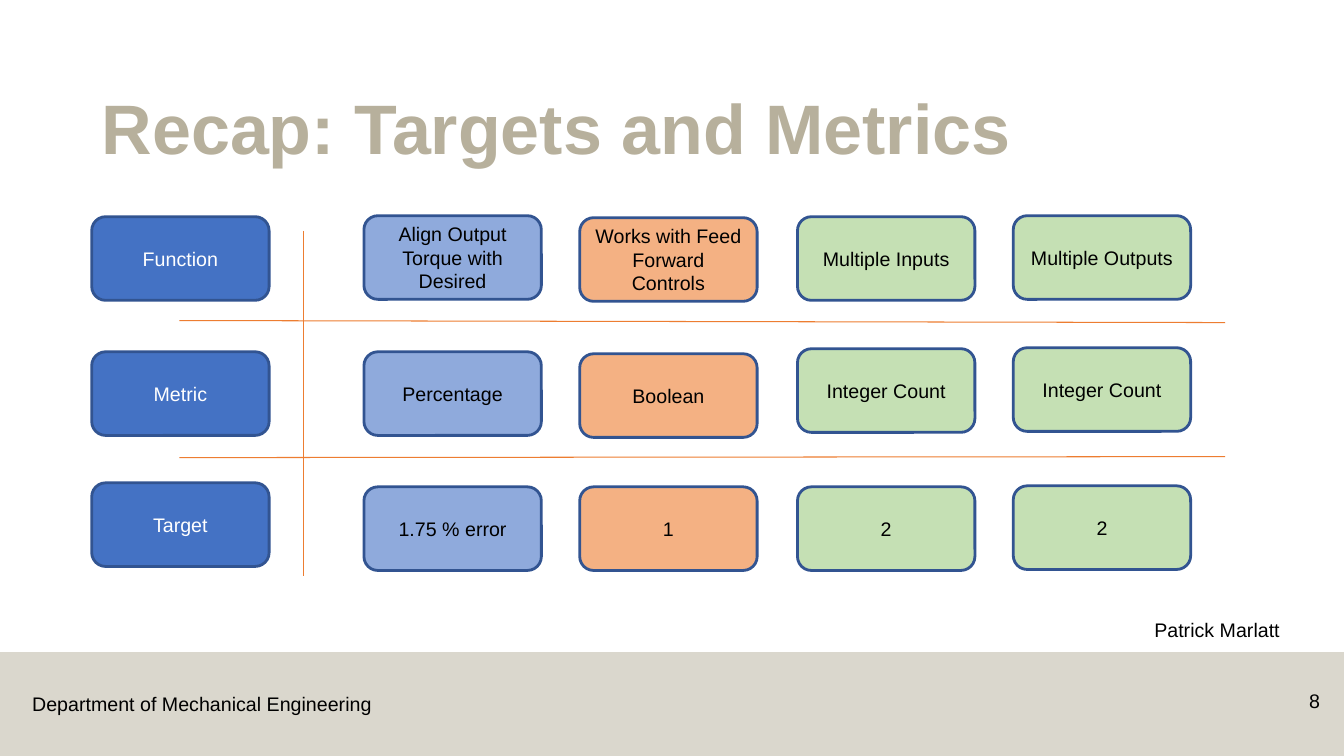
from lxml import etree
from pptx import Presentation
from pptx.dml.color import RGBColor
from pptx.enum.shapes import MSO_CONNECTOR, MSO_SHAPE
from pptx.enum.text import MSO_ANCHOR, PP_ALIGN
from pptx.oxml.ns import qn
from pptx.util import Inches, Pt

RECTANGLE = MSO_SHAPE.RECTANGLE
ROUNDED = MSO_SHAPE.ROUNDED_RECTANGLE
STRAIGHT = MSO_CONNECTOR.STRAIGHT
LEFT, CENTER, RIGHT = PP_ALIGN.LEFT, PP_ALIGN.CENTER, PP_ALIGN.RIGHT
TOP, MIDDLE, BOTTOM = MSO_ANCHOR.TOP, MSO_ANCHOR.MIDDLE, MSO_ANCHOR.BOTTOM

BOX_WIDTH = 1.76
BOX_HEIGHT = 0.83
COLUMNS = [
    (0.91, "4472C4", "FFFFFF", [("Function", 2.15), ("Metric", 3.49), ("Target", 4.79)]),
    (3.61, "8FAADC", "000000", [("Align Output Torque with Desired", 2.14),
                                ("Percentage", 3.49), ("1.75 % error", 4.83)]),
    (5.75, "F4B183", "000000", [("Works with Feed Forward Controls", 2.16),
                                ("Boolean", 3.51), ("1", 4.83)]),
    (7.91, "C5E0B4", "000000", [("Multiple Inputs", 2.15), ("Integer Count", 3.46), ("2", 4.83)]),
    (10.05, "C5E0B4", "000000", [("Multiple Outputs", 2.14), ("Integer Count", 3.45), ("2", 4.82)]),
]
DIVIDERS = [
    (1.78, 3.18, 12.15, 3.2),
    (1.78, 4.54, 12.15, 4.53),
    (3.01, 2.29, 3.01, 5.71),
]


def rgb(value):
    return RGBColor.from_string(value)


def write_text(frame, text, size=14, color="000000", bold=False,
               align=LEFT, anchor=TOP, spacing=1.0):
    frame.word_wrap = True
    frame.vertical_anchor = anchor
    paragraph = frame.paragraphs[0]
    paragraph.alignment = align
    paragraph.line_spacing = spacing
    run = paragraph.add_run()
    run.text = text
    run.font.name = "Arial"
    run.font.size = Pt(size)
    run.font.bold = bold
    run.font.color.rgb = rgb(color)


class SlideBuilder:
    outline = "325491"
    divider = "ED7D31"
    accent = "B7B09C"

    def __init__(self, slide):
        self.slide = slide

    def band(self, left, top, width, height, opacity):
        shape = self.slide.shapes.add_shape(
            RECTANGLE, Inches(left), Inches(top), Inches(width), Inches(height))
        shape.shadow.inherit = False
        shape.fill.solid()
        shape.fill.fore_color.rgb = rgb(self.accent)
        shape.line.fill.background()
        color = shape.fill._xPr.find(qn("a:solidFill"))[0]
        etree.SubElement(color, qn("a:alpha"), val=str(opacity * 1000))

    def text(self, text, left, top, width, height, **style):
        shape = self.slide.shapes.add_textbox(
            Inches(left), Inches(top), Inches(width), Inches(height))
        write_text(shape.text_frame, text, **style)

    def box(self, text, left, top, height, fill, color):
        shape = self.slide.shapes.add_shape(
            ROUNDED, Inches(left), Inches(top), Inches(BOX_WIDTH), Inches(height))
        shape.shadow.inherit = False
        shape.fill.solid()
        shape.fill.fore_color.rgb = rgb(fill)
        shape.line.color.rgb = rgb(self.outline)
        shape.line.width = Pt(2)
        write_text(shape.text_frame, text, color=color, align=CENTER, anchor=MIDDLE)

    def line(self, *ends):
        connector = self.slide.shapes.add_connector(STRAIGHT, *map(Inches, ends))
        connector.line.color.rgb = rgb(self.divider)
        connector.line.width = Pt(0.75)
        etree.SubElement(connector._element.spPr, qn("a:effectLst"))


def main():
    presentation = Presentation()
    presentation.slide_width = Inches(13.33)
    presentation.slide_height = Inches(7.5)
    builder = SlideBuilder(presentation.slides.add_slide(presentation.slide_layouts[6]))

    builder.band(0, 6.47, 13.33, 1.03, opacity=50)
    builder.text("Department of Mechanical Engineering", 0.22, 6.82, 3.75, 0.34)
    builder.text("Recap: Targets and Metrics", 0.91, 0.63, 11.5, 1.1, size=50,
                 color=builder.accent, bold=True, anchor=BOTTOM, spacing=0.9)
    builder.text("8", 12.42, 6.79, 0.77, 0.4, align=RIGHT)
    builder.text("Patrick Marlatt", 11.35, 6.11, 1.98, 0.34, spacing=0.9)

    for divider in DIVIDERS:
        builder.line(*divider)
    for left, fill, color, cells in COLUMNS:
        for text, top in cells:
            builder.box(text, left, top, BOX_HEIGHT, fill, color)

    presentation.save("out.pptx")


if __name__ == "__main__":
    main()
